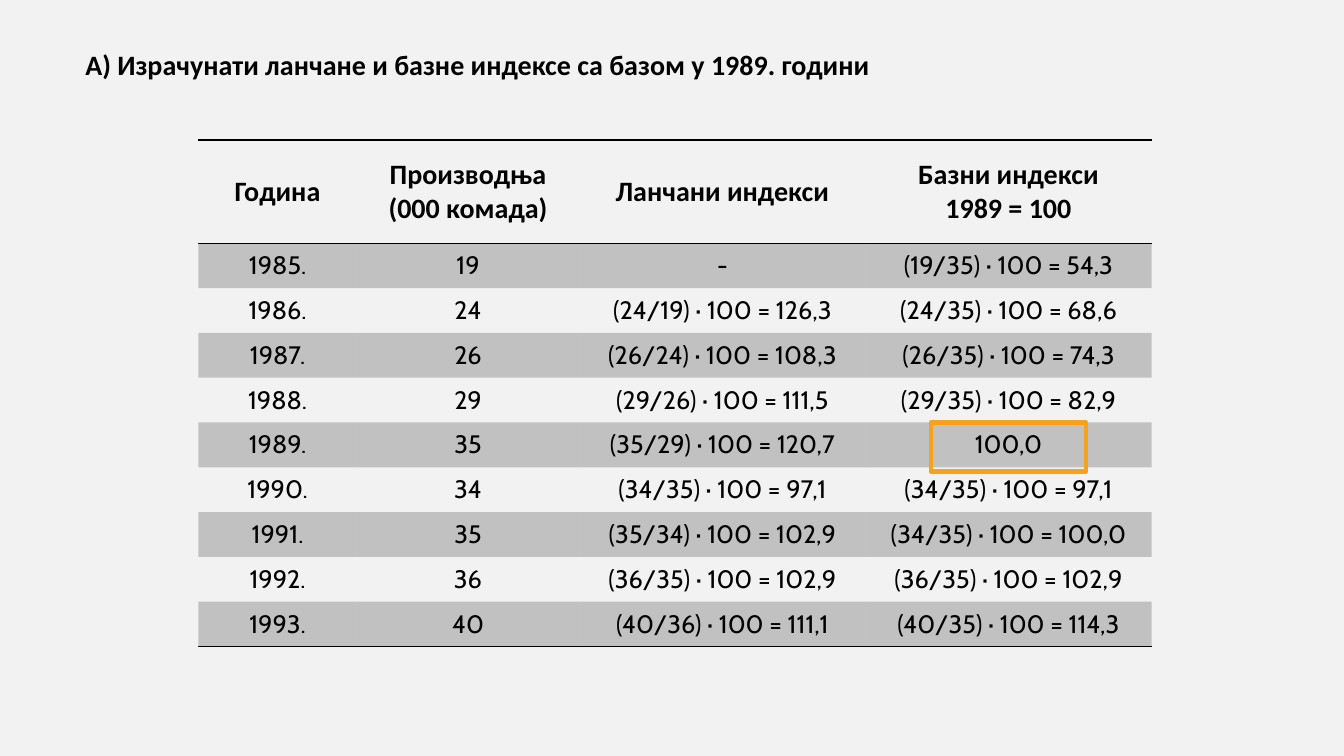
import lxml.etree
import pptx
import pptx.dml.color
import pptx.enum.shapes
import pptx.enum.text
import pptx.oxml
import pptx.oxml.ns
import pptx.util

Cm, Pt = pptx.util.Cm, pptx.util.Pt
RGBColor = pptx.dml.color.RGBColor
qn = pptx.oxml.ns.qn

BACKGROUND = RGBColor(0xF2, 0xF2, 0xF2)
BLACK = RGBColor(0, 0, 0)
ORANGE = RGBColor(0xF6, 0xA2, 0x1D)
BAND_OPACITY = 20

TITLE = "А) Израчунати ланчане и базне индексе са базом у 1989. години"
HEADERS = ["Година", "Производња\n(000 комада)", "Ланчани индекси",
           "Базни индекси\n1989 = 100"]
YEARS = [
    ("1985.", "19", "-", "(19/35) · 100 = 54,3"),
    ("1986.", "24", "(24/19) · 100 = 126,3", "(24/35) · 100 = 68,6"),
    ("1987.", "26", "(26/24) · 100 = 108,3", "(26/35) · 100 = 74,3"),
    ("1988.", "29", "(29/26) · 100 = 111,5", "(29/35) · 100 = 82,9"),
    ("1989.", "35", "(35/29) · 100 = 120,7", "100,0"),
    ("1990.", "34", "(34/35) · 100 = 97,1", "(34/35) · 100 = 97,1"),
    ("1991.", "35", "(35/34) · 100 = 102,9", "(34/35) · 100 = 100,0"),
    ("1992.", "36", "(36/35) · 100 = 102,9", "(36/35) · 100 = 102,9"),
    ("1993.", "40", "(40/36) · 100 = 111,1", "(40/35) · 100 = 114,3"),
]
BASE_ROW = 5
COLUMN_WIDTHS = [Cm(3.99), Cm(5.61), Cm(7.21), Cm(7.21)]
HEADER_HEIGHT, YEAR_HEIGHT = Cm(2.6), Cm(1.13)


def format_runs(text_frame, font_name, size, bold):
    for paragraph in text_frame.paragraphs:
        for run in paragraph.runs:
            run.font.name = font_name
            run.font.size = Pt(size)
            run.font.bold = bold
            run.font.color.rgb = BLACK


def add_title(slide, left, top, width, height):
    title = slide.shapes.add_textbox(left, top, width, height).text_frame
    title.word_wrap = True
    title.text = TITLE
    title.paragraphs[0].space_before = Pt(10)
    format_runs(title, "Calibri", 20, True)


def set_borders(cell, ruled_sides):
    """Rule the given sides of a cell in black and clear the others."""
    properties = cell._tc.get_or_add_tcPr()
    for index, side in enumerate(("lnL", "lnR", "lnT", "lnB")):
        line = lxml.etree.Element(qn("a:" + side), w=str(Pt(1)))
        if side in ruled_sides:
            fill = lxml.etree.SubElement(line, qn("a:solidFill"))
            lxml.etree.SubElement(fill, qn("a:srgbClr"), val=str(BLACK))
        else:
            lxml.etree.SubElement(line, qn("a:noFill"))
        properties.insert(index, line)


def fill_cell(cell, banded):
    if not banded:
        cell.fill.background()
        return
    cell.fill.solid()
    cell.fill.fore_color.rgb = BLACK
    color = cell._tc.tcPr.find(".//" + qn("a:srgbClr"))
    lxml.etree.SubElement(color, qn("a:alpha"), val=str(BAND_OPACITY * 1000))


def add_index_table(slide, left, top):
    rows = [HEADERS] + YEARS
    height = HEADER_HEIGHT + YEAR_HEIGHT * len(YEARS)
    table = slide.shapes.add_table(len(rows), len(HEADERS), left, top,
                                   sum(COLUMN_WIDTHS), height).table
    for column, width in zip(table.columns, COLUMN_WIDTHS):
        column.width = width

    for row_index, texts in enumerate(rows):
        is_header = row_index == 0
        table.rows[row_index].height = HEADER_HEIGHT if is_header else YEAR_HEIGHT
        if is_header:
            ruled_sides = ("lnT", "lnB")
        elif row_index == 1:
            ruled_sides = ("lnT",)
        elif row_index == len(YEARS):
            ruled_sides = ("lnB",)
        else:
            ruled_sides = ()
        for column_index, text in enumerate(texts):
            cell = table.cell(row_index, column_index)
            cell.text_frame.text = text
            cell.vertical_anchor = pptx.enum.text.MSO_ANCHOR.MIDDLE
            for paragraph in cell.text_frame.paragraphs:
                paragraph.alignment = pptx.enum.text.PP_ALIGN.CENTER
            if is_header:
                format_runs(cell.text_frame, "Calibri", 20, True)
            else:
                format_runs(cell.text_frame, "Cabin", 18, False)
            fill_cell(cell, banded=row_index % 2 == 1)
            set_borders(cell, ruled_sides)


def add_base_frame(slide, table_left, table_top):
    """Frame the base year's index, centred on its cell."""
    width, height = Cm(3.91), Cm(1.24)
    center_x = table_left + sum(COLUMN_WIDTHS) - COLUMN_WIDTHS[-1] // 2
    center_y = table_top + HEADER_HEIGHT + int(YEAR_HEIGHT * (BASE_ROW - 0.5))
    frame = slide.shapes.add_shape(
        pptx.enum.shapes.MSO_SHAPE.RECTANGLE, center_x - width // 2,
        center_y - height // 2 + Cm(0.05), width, height)
    frame.shadow.inherit = False
    frame.fill.background()
    frame.line.color.rgb = ORANGE
    frame.line.width = Pt(3)


def main():
    presentation = pptx.Presentation()
    presentation.slide_width, presentation.slide_height = Cm(33.87), Cm(19.05)
    slide = presentation.slides.add_slide(presentation.slide_layouts[6])
    slide.background.fill.solid()
    slide.background.fill.fore_color.rgb = BACKGROUND

    table_left, table_top = Cm(5), Cm(3.53)
    add_title(slide, Cm(1.9), Cm(1.07), Cm(30.23), Cm(1.3))
    add_index_table(slide, table_left, table_top)
    add_base_frame(slide, table_left, table_top)
    presentation.save("out.pptx")


if __name__ == "__main__":
    main()
